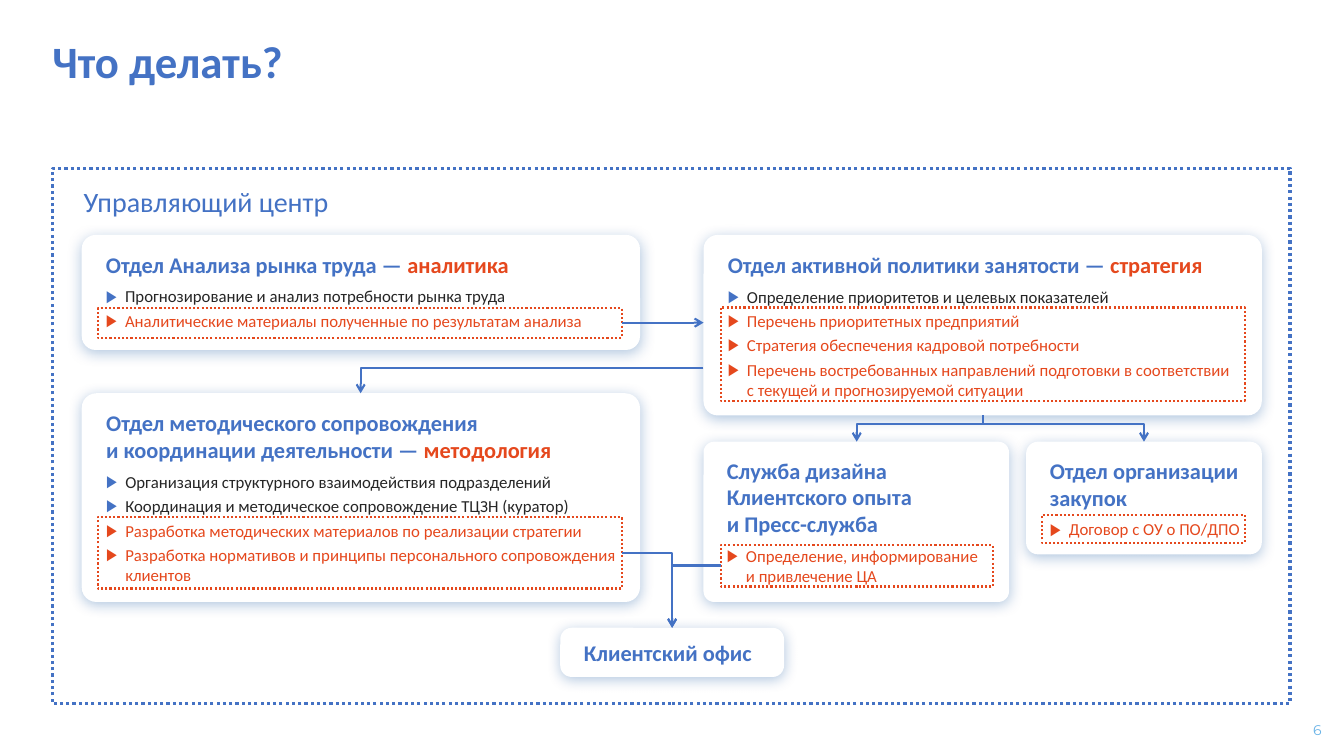
from dataclasses import dataclass

from lxml import etree
from pptx import Presentation
from pptx.dml.color import RGBColor
from pptx.enum.dml import MSO_LINE
from pptx.enum.shapes import MSO_CONNECTOR, MSO_SHAPE
from pptx.enum.text import MSO_ANCHOR, MSO_AUTO_SIZE, PP_ALIGN
from pptx.oxml import parse_xml
from pptx.oxml.ns import nsdecls, qn
from pptx.util import Cm, Pt

DOTS = MSO_LINE.ROUND_DOT
BENT, LINE = MSO_CONNECTOR.ELBOW, MSO_CONNECTOR.STRAIGHT
RECT, ROUND = MSO_SHAPE.RECTANGLE, MSO_SHAPE.ROUNDED_RECTANGLE
TOP, MIDDLE = MSO_ANCHOR.TOP, MSO_ANCHOR.MIDDLE
LEFT, CENTER = PP_ALIGN.LEFT, PP_ALIGN.CENTER
FIXED = MSO_AUTO_SIZE.NONE


@dataclass(frozen=True)
class Theme:
    font: str = "Calibri"
    digit: str = "Montserrat"
    blue: str = "4472C4"
    red: str = "E5481D"
    dark: str = "262626"
    sky: str = "69B3E7"
    white: str = "FFFFFF"
    shade: str = "004898"
    title: int = 32
    group: int = 20
    head: int = 16
    item: int = 12
    page: int = 10


T = Theme()
PAD = (0.51, 0.3, 0.41, 0.3)
DENT = 0.48
COL1, COL2, WIDE = 2.06, 17.73, 14.07


def rgb(code):
    return RGBColor.from_string(code)


# Text
def setup(frame, pad, anchor=TOP):
    frame.word_wrap = True
    frame.auto_size = FIXED
    frame.vertical_anchor = anchor
    (frame.margin_left, frame.margin_top,
     frame.margin_right, frame.margin_bottom) = map(Cm, pad)


def style(para, size, color, bold=False, font=T.font, align=LEFT, after=0):
    para.alignment = align
    para.space_before = Pt(0)
    para.space_after = Pt(after)
    for run in para.runs:
        run.font.name = font
        run.font.size = Pt(size)
        run.font.bold = bold
        run.font.color.rgb = rgb(color)
    for brk in para._p.findall(qn("a:br")):
        etree.SubElement(brk, qn("a:rPr"), sz=str(size * 100))


def indent(para, width, mark=None, color=T.blue):
    props = para._p.get_or_add_pPr()
    props.set("marL", str(Cm(width)))
    props.set("indent", str(-Cm(width)))
    if not mark:
        etree.SubElement(props, qn("a:buNone"))
        return
    tint = etree.SubElement(props, qn("a:buClr"))
    etree.SubElement(tint, qn("a:srgbClr"), val=color)
    etree.SubElement(props, qn("a:buFont"), typeface="Arial")
    etree.SubElement(props, qn("a:buChar"), char=mark)


def write(frame, head, accent="", plain=(), vivid=(), last=3):
    para = frame.paragraphs[0]
    para.text = head
    if accent:
        para.add_run().text = accent
    style(para, T.head, T.blue, bold=True, after=6)
    if accent:
        para.runs[-1].font.color.rgb = rgb(T.red)
    indent(para, 0)
    rows = [(t, T.dark, T.blue) for t in plain]
    rows += [(t, T.red, T.red) for t in vivid]
    for num, (text, color, tint) in enumerate(rows, 1):
        para = frame.add_paragraph()
        para.text = text
        style(para, T.item, color, after=last if num == len(rows) else 3)
        indent(para, DENT, "▶", tint)


# Boxes
def place(shape, box):
    shape.left, shape.top, shape.width, shape.height = map(Cm, box)


def paint(shape):
    shape.fill.solid()
    shape.fill.fore_color.rgb = rgb(T.white)
    shape.line.fill.background()
    shape._element.spPr.append(parse_xml(
        f'<a:effectLst {nsdecls("a")}><a:outerShdw blurRad="{Pt(10)}" '
        f'dist="{Pt(2)}" dir="5400000" algn="t" rotWithShape="0">'
        f'<a:srgbClr val="{T.shade}"><a:alpha val="30000"/></a:srgbClr>'
        '</a:outerShdw></a:effectLst>'))


def card(holder, box, curve, *words, **lists):
    place(holder, box)
    ratio = round(curve / box[3] * 100000)
    holder._element.spPr.append(parse_xml(
        f'<a:prstGeom {nsdecls("a")} prst="roundRect"><a:avLst>'
        f'<a:gd name="adj" fmla="val {ratio}"/></a:avLst></a:prstGeom>'))
    paint(holder)
    setup(holder.text_frame, PAD)
    write(holder.text_frame, *words, **lists)


def office(slide, box, curve, text):
    shape = slide.shapes.add_shape(ROUND, *map(Cm, box))
    shape.adjustments[0] = curve / box[3]
    paint(shape)
    setup(shape.text_frame, (0.51, 0.2, 0.51, 0.2))
    write(shape.text_frame, text)


def frame(slide, box, color, width):
    shape = slide.shapes.add_shape(RECT, *map(Cm, box))
    shape.shadow.inherit = False
    shape.fill.background()
    shape.line.color.rgb = rgb(color)
    shape.line.width = Pt(width)
    shape.line.dash_style = DOTS
    return shape


# Arrows
def arrow(slide, kind, *ends):
    link = slide.shapes.add_connector(kind, *map(Cm, ends))
    link.line.color.rgb = rgb(T.blue)
    link.line.width = Pt(1.5)
    etree.SubElement(link.line._get_or_add_ln(), qn("a:tailEnd"), type="arrow")
    etree.SubElement(link._element.spPr, qn("a:effectLst"))
    return link._element.spPr


def corner(slide, *ends):
    props = arrow(slide, BENT, *ends)
    props.find(qn("a:prstGeom")).set("prst", "bentConnector2")


def drop(slide, x1, y1, x2, y2):
    """Elbow that leaves downwards, turns aside and ends downwards."""
    midx, midy = (x1 + x2) / 2, (y1 + y2) / 2
    across, down = (y2 - y1) / 2, abs(x2 - x1) / 2
    side = 1 if x2 < x1 else -1
    props = arrow(slide, BENT, midx - side * across, midy - down,
                  midx + side * across, midy + down)
    props.find(qn("a:xfrm")).set("rot", str((90 if side > 0 else 270) * 60000))
    geom = props.find(qn("a:prstGeom"))
    guides = geom.find(qn("a:avLst"))
    if guides is None:
        guides = etree.SubElement(geom, qn("a:avLst"))
    etree.SubElement(guides, qn("a:gd"), name="adj1", fmla="val 34000")


def main():
    deck = Presentation()
    deck.slide_width, deck.slide_height = Cm(33.87), Cm(19.05)
    slide = deck.slides.add_slide(deck.slide_layouts[4])
    title, *slots = slide.placeholders

    # Title and page number
    place(title, (1.32, 0.86, 25.15, 1.37))
    setup(title.text_frame, (0, 0, 0, 0))
    title.text_frame.text = "Что делать?"
    style(title.text_frame.paragraphs[0], T.title, T.blue, bold=True)
    page = slide.shapes.add_textbox(Cm(32.54), Cm(18.06), Cm(1.32), Cm(0.69))
    setup(page.text_frame, (0.18, 0.1, 0.18, 0.1), MIDDLE)
    page.text_frame.text = "6"
    style(page.text_frame.paragraphs[0], T.page, T.sky, font=T.digit,
          align=CENTER)

    # Departments
    card(slots[0], (COL1, 5.92, WIDE, 2.9), 0.35,
         "Отдел Анализа рынка труда — ", "аналитика",
         plain=["Прогнозирование и анализ потребности рынка труда"],
         vivid=["Аналитические материалы полученные по результатам анализа"])
    card(slots[1], (COL1, 9.91, WIDE, 5.26), 0.37,
         "Отдел методического сопровождения\vи координации деятельности — ",
         "методология",
         plain=["Организация структурного взаимодействия подразделений",
                "Координация и методическое сопровождение ТЦЗН (куратор)"],
         vivid=["Разработка методических материалов по реализации стратегии",
                "Разработка нормативов и принципы персонального "
                "сопровождения клиентов"])
    card(slots[2], (COL2, 5.92, WIDE, 4.55), 0.36,
         "Отдел активной политики занятости — ", "стратегия",
         plain=["Определение приоритетов и целевых показателей"],
         vivid=["Перечень приоритетных предприятий",
                "Стратегия обеспечения кадровой потребности",
                "Перечень востребованных направлений подготовки "
                "в соответствии\vс текущей и прогнозируемой ситуации"])
    card(slots[3], (COL2, 11.13, 7.7, 4.04), 0.27,
         "Служба дизайна Клиентского опыта\vи Пресс-служба",
         vivid=["Определение, информирование и привлечение ЦА"])
    buying = slide.shapes.add_textbox(0, 0, 0, 0)
    buying._element.spPr.remove(buying._element.spPr.find(qn("a:prstGeom")))
    card(buying, (25.86, 11.13, 5.94, 2.84), 0.3,
         "Отдел организации закупок",
         vivid=["Договор с ОУ о ПО/ДПО"], last=0)
    office(slide, (14.12, 15.82, 5.64, 1.24), 0.29, "Клиентский офис")

    # Dotted frames
    for box in ((2.46, 7.77, 13.21, 0.74), (2.46, 13.03, 13.21, 1.8),
                (18.16, 7.75, 13.21, 2.36), (18.16, 13.74, 6.86, 1.04),
                (26.26, 12.98, 5.11, 0.71)):
        frame(slide, box, T.red, 1.5)
    center = frame(slide, (1.32, 4.24, 31.19, 13.49), T.blue, 2.25)
    setup(center.text_frame, (0.79, 0.41, 0.25, 0.13))
    center.text_frame.text = "Управляющий центр"
    style(center.text_frame.paragraphs[0], T.group, T.blue)

    # Links between departments
    drop(slide, 24.77, 10.46, 21.59, 11.13)
    drop(slide, 24.77, 10.46, 28.83, 11.13)
    corner(slide, 17.73, 9.27, 9.09, 9.91)
    arrow(slide, LINE, 15.67, 8.13, 17.73, 8.13)
    corner(slide, 15.67, 13.94, 16.94, 15.82)
    corner(slide, 18.16, 14.25, 16.94, 15.82)
    deck.save("out.pptx")


if __name__ == "__main__":
    main()
